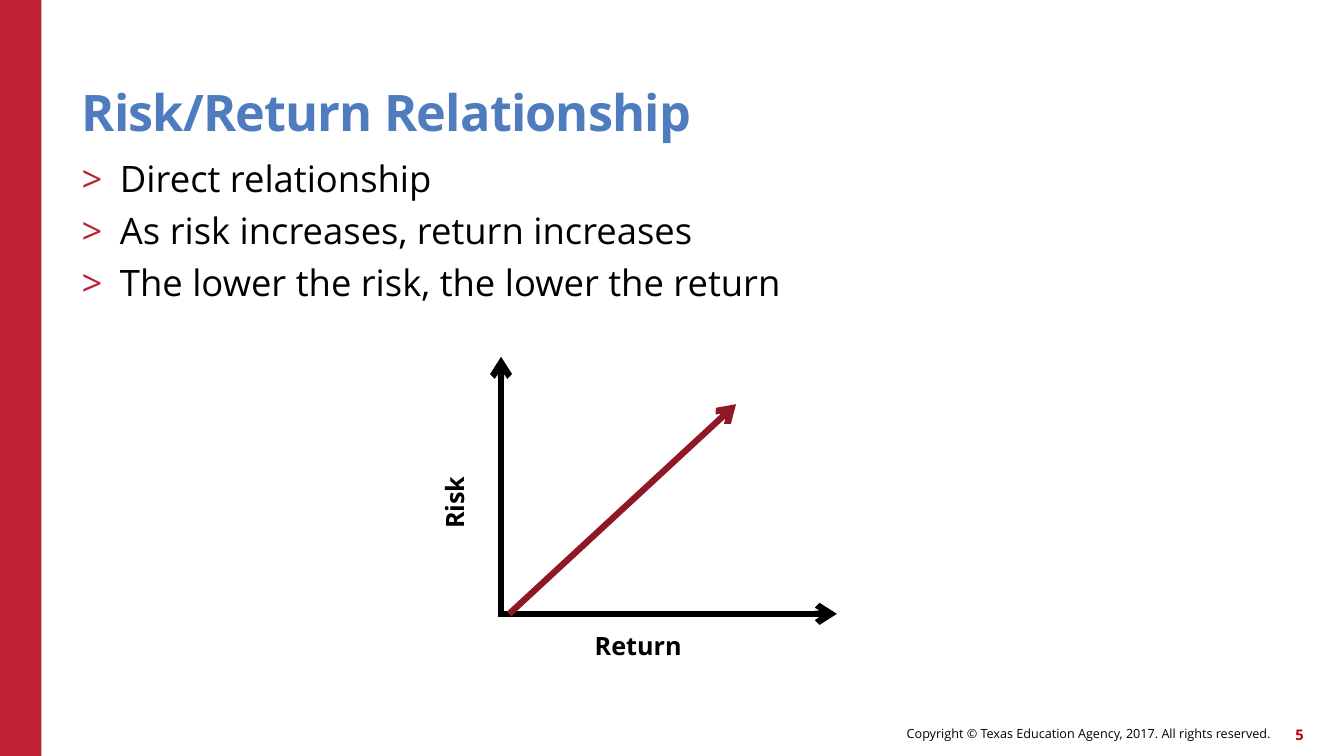
from lxml import etree
from pptx import Presentation
from pptx.dml.color import RGBColor
from pptx.enum.shapes import MSO_CONNECTOR, MSO_SHAPE
from pptx.enum.text import MSO_ANCHOR as ANCHOR, PP_ALIGN as ALIGN
from pptx.oxml.ns import qn
from pptx.util import Inches, Pt

RED = RGBColor(0xC0, 0x20, 0x33)
DARK_RED = RGBColor(0x90, 0x18, 0x26)
NUMBER_RED = RGBColor(0xC0, 0x00, 0x00)
BLUE = RGBColor(0x4E, 0x7C, 0xBE)
BLACK = RGBColor(0x00, 0x00, 0x00)

deck = Presentation()
deck.slide_width, deck.slide_height = Inches(13.33), Inches(7.5)
page = deck.slides.add_slide(deck.slide_layouts[6])


def add_text(place, lines, size, color, bold=False, align=ALIGN.LEFT,
             anchor=ANCHOR.TOP, inset=0):
    box = page.shapes.add_textbox(*[Inches(length) for length in place])
    frame = box.text_frame
    frame.word_wrap = True
    frame.vertical_anchor = anchor
    frame.margin_left = frame.margin_right = Inches(inset)
    frame.margin_top = frame.margin_bottom = Inches(inset / 2)
    frame.text = "\n".join(lines)
    for para in frame.paragraphs:
        para.alignment = align
        for span in para.runs:
            span.font.name = "Open Sans"
            span.font.size = Pt(size)
            span.font.bold = bold
            span.font.color.rgb = color
    return box


def add_arrow(start, end, color):
    arrow = page.shapes.add_connector(
        MSO_CONNECTOR.STRAIGHT, *[Inches(length) for length in start + end])
    arrow.line.color.rgb = color
    arrow.line.width = Pt(4.5)
    etree.SubElement(arrow.line._get_or_add_ln(), qn("a:tailEnd"), type="arrow")
    etree.SubElement(arrow._element.spPr, qn("a:effectLst"))


band = page.shapes.add_shape(MSO_SHAPE.RECTANGLE, 0, 0, Inches(0.41), deck.slide_height)
band.shadow.inherit = False
band.fill.solid()
band.fill.fore_color.rgb = RED
band.line.fill.background()

add_text((6.14, 7.12, 6.46, 0.32),
         ["Copyright © Texas Education Agency, 2017. All rights reserved."],
         9, BLACK, align=ALIGN.RIGHT, anchor=ANCHOR.MIDDLE)
add_text((12.51, 7.13, 0.42, 0.32), ["5"], 10.5, NUMBER_RED, bold=True,
         align=ALIGN.RIGHT, anchor=ANCHOR.MIDDLE)

title = add_text((0.81, 0.45, 11, 0.96), ["Risk/Return Relationship"], 36, BLUE,
                 bold=True, anchor=ANCHOR.BOTTOM)
title_para = title.text_frame.paragraphs[0]
title_para.line_spacing = 0.9
title_para.runs[0].font._element.set("spc", "-60")

points = add_text((0.81, 1.55, 12.09, 5.18),
                  ["Direct relationship",
                   "As risk increases, return increases",
                   "The lower the risk, the lower the return"], 26, BLACK)
for index, para in enumerate(points.text_frame.paragraphs):
    para.space_before = Pt(6 if index else 0)
    properties = para._p.get_or_add_pPr()
    properties.set("marL", str(Inches(0.38)))
    properties.set("indent", str(-Inches(0.38)))
    bullet_color = etree.SubElement(properties, qn("a:buClr"))
    etree.SubElement(bullet_color, qn("a:srgbClr"), val=str(RED))
    etree.SubElement(properties, qn("a:buFont"), typeface="Open Sans")
    etree.SubElement(properties, qn("a:buChar"), char=">")

add_arrow((4.97, 6.09), (8.3, 6.09), BLACK)
add_arrow((5.05, 6.09), (7.3, 4.01), DARK_RED)
risk_label = add_text((3.85, 4.47, 1.33, 0.42), ["Risk"], 18, BLACK, bold=True, inset=0.1)
risk_label.rotation = 270
add_arrow((4.97, 6.12), (4.97, 3.54), BLACK)
add_text((5.8, 6.2, 1.33, 0.42), ["Return"], 18, BLACK, bold=True, inset=0.1)

deck.save("out.pptx")
